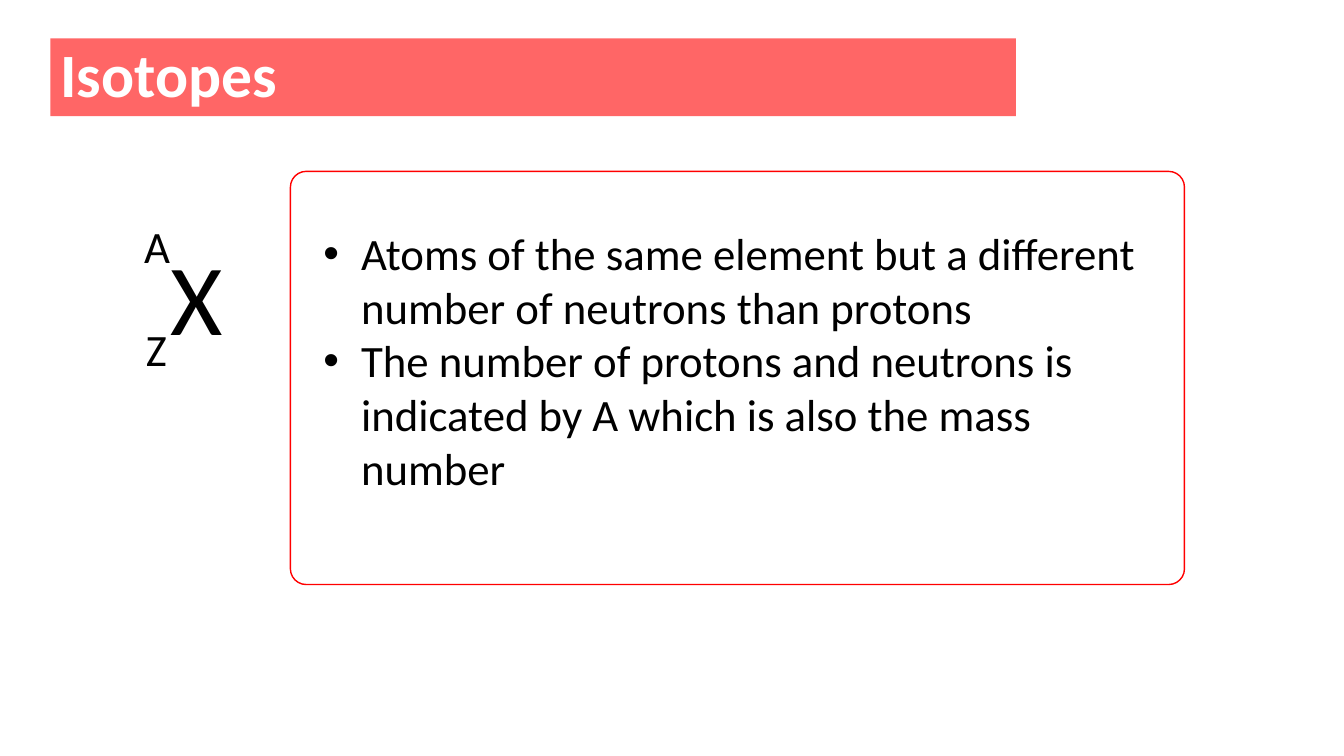
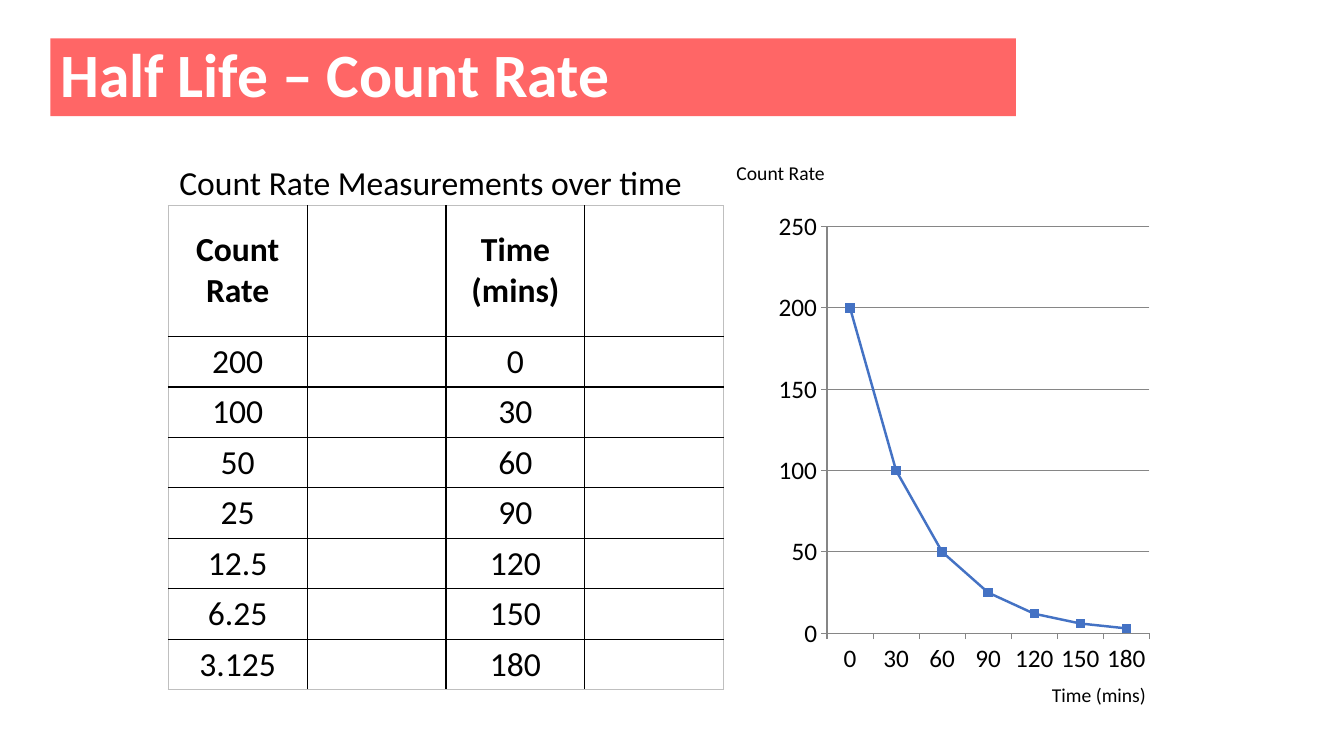
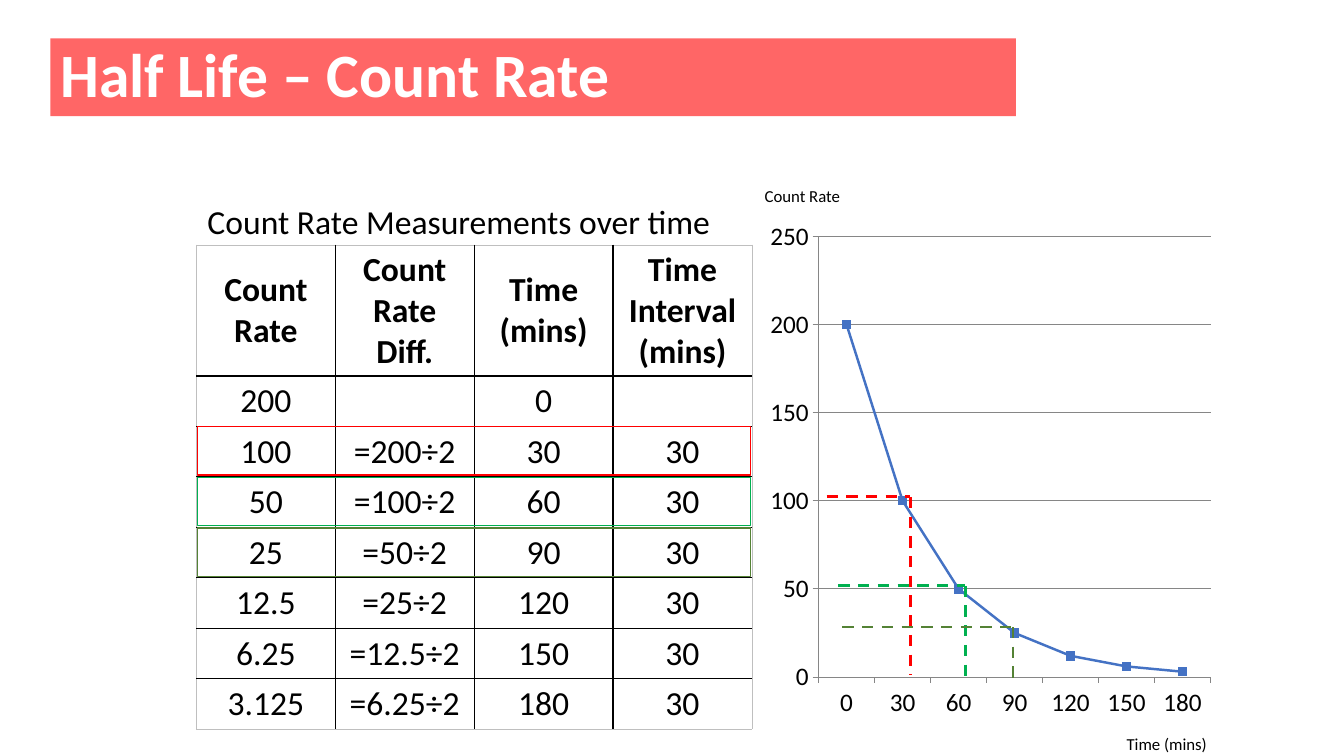
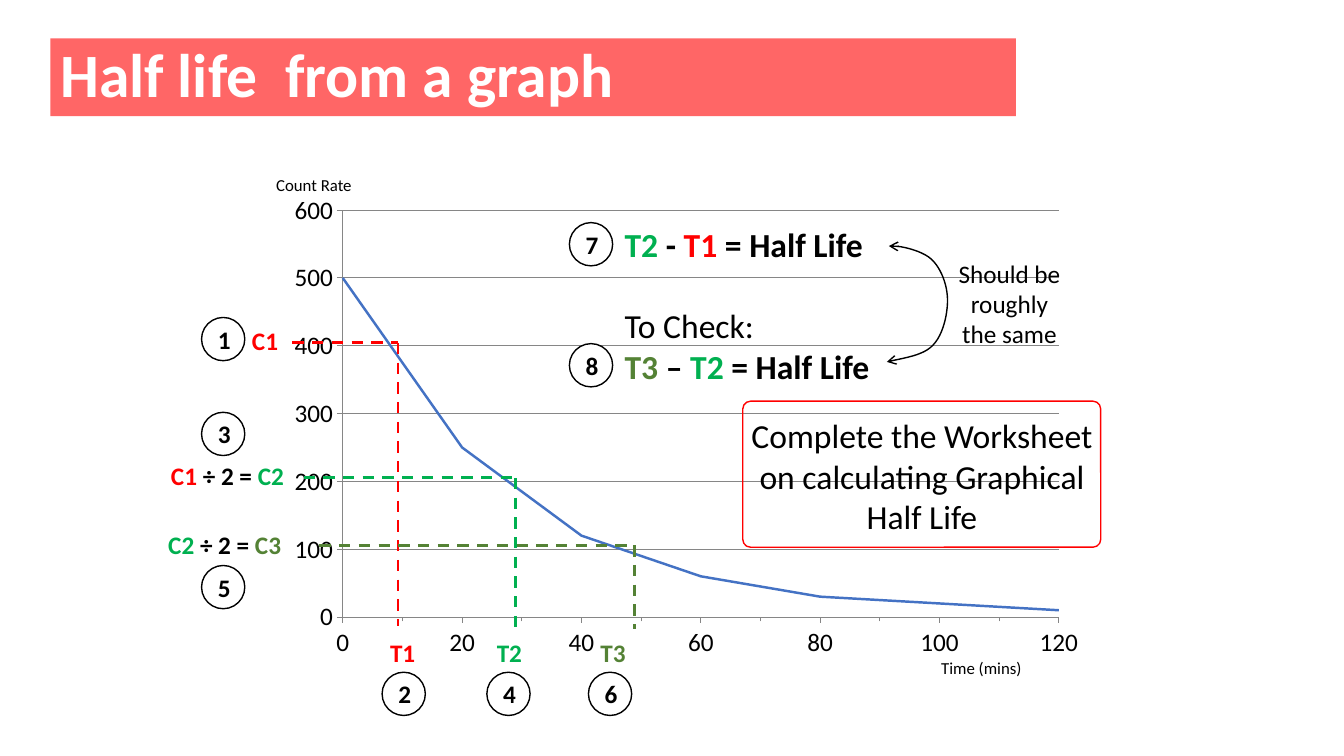
from lxml import etree
from pptx import Presentation
from pptx import util as u
from pptx.chart import data as cd
from pptx.dml.color import RGBColor
from pptx.enum import chart as ch, dml, shapes, text
from pptx.oxml.ns import qn

FONT = "Calibri"
COLORS = {"band": "FF6666", "white": "FFFFFF", "black": "000000", "red": "FF0000",
          "green": "00B050", "olive": "548235", "series": "4472C4",
          "axis": "868686", "edge": "BFBFBF"}
GUIDE_COLORS = ["red", "green", "olive"]
LEFT, CENTER = text.PP_ALIGN.LEFT, text.PP_ALIGN.CENTER
HEAD_H, ROW_H, COL_W = 3.3, 1.27, 3.5
RATES = ["200", "100", "50", "25", "12.5", "6.25", "3.125"]
TIMES = ["0", "30", "60", "90", "120", "150", "180"]
DECAY = [200, 100, 50, 25, 12, 6, 3]


def rgb(name):
    return RGBColor.from_string(COLORS[name])


def cms(*values):
    return [u.Cm(v) for v in values]


def write(tf, paras, size=18, color="black", bold=False, align=LEFT, bullet=False, spacing=None):
    """Fill a text frame; a paragraph is a string or a list of (text, colour) runs."""
    paras = [paras] if isinstance(paras, str) else paras
    for i, runs in enumerate(paras):
        p = tf.paragraphs[0] if i == 0 else tf.add_paragraph()
        p.alignment = align
        if spacing:
            p.line_spacing = spacing
        if bullet:
            pPr = p._p.get_or_add_pPr()
            pPr.set("marL", str(u.Cm(0.95)))
            pPr.set("indent", str(-u.Cm(0.95)))
            etree.SubElement(pPr, qn("a:buFont"), typeface="Arial")
            etree.SubElement(pPr, qn("a:buChar"), char="•")
        for words, tint in [(runs, color)] if isinstance(runs, str) else runs:
            r = p.add_run()
            r.text = words
            r.font.name, r.font.size = FONT, u.Pt(size)
            r.font.bold = bold or tint != color
            r.font.color.rgb = rgb(tint)


def add_text(s, box, paras, wrap=False, **fmt):
    tf = s.shapes.add_textbox(*cms(*box)).text_frame
    tf.word_wrap = wrap
    tf.auto_size = text.MSO_AUTO_SIZE.SHAPE_TO_FIT_TEXT
    write(tf, paras, **fmt)


def style(sp, fill=None, line=None):
    sp.shadow.inherit = False
    if fill:
        sp.fill.solid()
        sp.fill.fore_color.rgb = rgb(fill)
    else:
        sp.fill.background()
    if line:
        sp.line.color.rgb = rgb(line)
        sp.line.width = u.Pt(1)
    else:
        sp.line.fill.background()


def add_box(s, kind, box, fill=None, line=None, radius=None):
    sp = s.shapes.add_shape(kind, *cms(*box))
    style(sp, fill, line)
    if radius:
        sp.adjustments[0] = radius
    return sp


def titled_slide(prs, title):
    s = prs.slides.add_slide(prs.slide_layouts[6])
    sp = add_box(s, shapes.MSO_SHAPE.RECTANGLE, (1.27, 0.97, 24.33, 1.96), fill="band")
    sp.text_frame.vertical_anchor = text.MSO_ANCHOR.MIDDLE
    write(sp.text_frame, title, size=44, color="white", bold=True, spacing=0.9)
    return s


def red_card(s, box, radius):
    add_box(s, shapes.MSO_SHAPE.ROUNDED_RECTANGLE, box, line="red", radius=radius)


def nuclide(s, x, y):
    """The symbol X with its mass number A and atomic number Z."""
    add_text(s, (x + 0.66, y + 0.41, 2.31, 3.33), "X", wrap=True, size=72)
    add_text(s, (x, y, 1.17, 1.63), "A", size=32)
    add_text(s, (x + 0.05, y + 2.6, 1.04, 1.63), "Z", size=32)


def set_borders(cell, outer):
    """Draw inner borders black and those in the set outer as a thin grey edge."""
    tcPr = cell._tc.get_or_add_tcPr()
    for i, side in enumerate("LRTB"):
        color, pt = ("edge", 0.5) if side in outer else ("black", 1)
        ln = etree.Element(qn("a:ln" + side), w=str(u.Pt(pt)))
        fill = etree.SubElement(ln, qn("a:solidFill"))
        etree.SubElement(fill, qn("a:srgbClr"), val=COLORS[color])
        tcPr.insert(i, ln)


def rate_table(s, x, y, rows):
    add_text(s, (x + 0.03, y - 1.22, 13.31, 1.27), "Count Rate Measurements over time", size=24)
    n, m = len(rows), len(rows[0])
    height = HEAD_H + (n - 1) * ROW_H
    tbl = s.shapes.add_table(n, m, *cms(x, y, m * COL_W, height)).table
    tbl.first_row = tbl.horz_banding = False
    for col in tbl.columns:
        col.width = u.Cm(COL_W)
    for i, row in enumerate(rows):
        tbl.rows[i].height = u.Cm(ROW_H if i else HEAD_H)
        for j, words in enumerate(row):
            cell = tbl.cell(i, j)
            cell.fill.background()
            cell.vertical_anchor = text.MSO_ANCHOR.MIDDLE
            if words:
                write(cell.text_frame, words, size=24, bold=i == 0, align=CENTER)
            edges = {"L": j == 0, "R": j == m - 1, "T": i == 0, "B": i == n - 1}
            set_borders(cell, {side for side, on in edges.items() if on})


def rate_chart(s, box, cats, vals, top, step, rate_at, time_at, label_size=12, markers=True):
    """Line chart with axis captions placed at offsets from its top left corner."""
    data = cd.CategoryChartData()
    data.categories = cats
    data.add_series("Series 1", vals)
    kind = ch.XL_CHART_TYPE.LINE_MARKERS if markers else ch.XL_CHART_TYPE.LINE
    chart = s.shapes.add_chart(kind, *cms(*box), data).chart
    chart.has_legend = chart.has_title = False
    chart.font.name, chart.font.size = FONT, u.Pt(18)
    chart.font.color.rgb = rgb("black")
    plot = chart.plots[0]
    plot.vary_by_categories = False
    series = plot.series[0]
    series.smooth = False
    series.format.line.color.rgb = rgb("series")
    series.format.line.width = u.Pt(1.75)
    if markers:
        series.marker.style = ch.XL_MARKER_STYLE.SQUARE
        series.marker.size = 6
        series.marker.format.fill.solid()
        series.marker.format.fill.fore_color.rgb = rgb("series")
        series.marker.format.line.color.rgb = rgb("series")
    val, cat = chart.value_axis, chart.category_axis
    val.minimum_scale, val.maximum_scale, val.major_unit = 0, top, step
    val.has_major_gridlines = True
    for axis in (val, cat):
        axis.major_tick_mark = ch.XL_TICK_MARK.OUTSIDE
    for part in (val, cat, val.major_gridlines):
        part.format.line.color.rgb = rgb("axis")
        part.format.line.width = u.Pt(0.75)
    if not markers:
        cat.minor_tick_mark = ch.XL_TICK_MARK.OUTSIDE
        start_on_axis(val)
    x, y = box[:2]
    w, h = (2.9, 0.86) if label_size > 12 else (2.57, 0.76)
    for words, (dx, dy) in (("Time (mins)", time_at), ("Count Rate", rate_at)):
        add_text(s, (x + dx, y + dy, w, h), words, size=label_size)


def start_on_axis(val):
    """Let the first category lie on the value axis."""
    xml = val._element
    for old in xml.findall(qn("c:crossBetween")):
        xml.remove(old)
    cross = etree.Element(qn("c:crossBetween"), val="midCat")
    xml.find(qn("c:crosses")).addnext(cross)


def guide(parent, color, x0, y0, x1, y1):
    """Dashed reading line: across from the value axis, then down to the time axis."""
    for ends in ((x0, y0, x1, y0), (x1, y0, x1, y1)):
        c = parent.shapes.add_connector(shapes.MSO_CONNECTOR.STRAIGHT, *cms(*ends))
        c.line.color.rgb = rgb(color)
        c.line.width = u.Pt(2)
        c.line.dash_style = dml.MSO_LINE.DASH
        etree.SubElement(c.element.spPr, qn("a:effectLst"))


def step_circle(s, number, x, y):
    sp = add_box(s, shapes.MSO_SHAPE.OVAL, (x, y, 1.09, 1.09), fill="white", line="black")
    sp.text_frame.vertical_anchor = text.MSO_ANCHOR.MIDDLE
    write(sp.text_frame, str(number), bold=True, align=CENTER)


def bezier(p0, p1, p2, p3, steps=12):
    for i in range(1, steps + 1):
        t = i / steps
        yield tuple((1 - t) ** 3 * a + 3 * t * (1 - t) ** 2 * b + 3 * t * t * (1 - t) * c + t ** 3 * d
                    for a, b, c, d in zip(p0, p1, p2, p3))


def compare_arrow(s, x, y):
    """Curved double arrow in a box with its top left corner at x, y."""
    knots = [(0, 2.92), (0.41, 2.82), (0.92, 2.77), (1.17, 2.49), (1.42, 2.23),
             (1.53, 1.72), (1.53, 1.37), (1.53, 0.99), (1.37, 0.56), (1.12, 0.33),
             (0.87, 0.1), (0.26, -0.03), (0.05, 0)]
    knots = [(x + dx, y + dy) for dx, dy in knots]
    curve = [pt for i in range(0, len(knots) - 1, 3) for pt in bezier(*knots[i:i + 4])]
    fb = s.shapes.build_freeform(*cms(*knots[0]))
    fb.add_line_segments([cms(*pt) for pt in curve], close=False)
    sp = fb.convert_to_shape()
    style(sp, line="black")
    ln = sp.element.spPr.find(qn("a:ln"))
    for end in ("a:headEnd", "a:tailEnd"):
        etree.SubElement(ln, qn(end), type="arrow")


def isotopes(prs):
    s = titled_slide(prs, "Isotopes")
    red_card(s, (7.32, 4.32, 22.53, 10.41), 0.038)
    add_text(s, (7.9, 5.56, 21.41, 7.09), [
        "Atoms of the same element but a different number of neutrons than protons",
        "The number of protons and neutrons is indicated by A which is also the mass number",
    ], wrap=True, size=32, bullet=True)
    nuclide(s, 3.38, 5.38)


def count_rate(prs):
    s = titled_slide(prs, "Half Life – Count Rate")
    rows = [["Count Rate", "", "Time (mins)", ""]]
    rows += [[rate, "", time, ""] for rate, time in zip(RATES, TIMES)]
    rate_table(s, 4.24, 5.18, rows)
    rate_chart(s, (19.43, 5.08, 9.73, 12.14), TIMES, DECAY, 250, 50,
               rate_at=(-1.12, -1.14), time_at=(6.83, 12.01), label_size=14)


def count_rate_halving(prs):
    s = titled_slide(prs, "Half Life – Count Rate")
    x, y = 4.95, 6.17
    rows = [["Count Rate", "Count Rate Diff.", "Time (mins)", "Time Interval (mins)"],
            [RATES[0], "", TIMES[0], ""]]
    rows += [[rate, f"={before}÷2", time, "30"]
             for before, rate, time in zip(RATES, RATES[1:], TIMES[1:])]
    rate_table(s, x, y, rows)
    rate_chart(s, (19.18, 5.31, 11.56, 13.03), TIMES, DECAY, 250, 50,
               rate_at=(-0.16, -0.76), time_at=(8.96, 13.05))
    guides = [(20.83, 12.52, 22.94, 17.02), (21.13, 14.76, 24.33, 17.22),
              (21.23, 15.8, 25.53, 17.27)]
    for color, ends in zip(GUIDE_COLORS, guides):
        guide(s.shapes.add_group_shape(), color, *ends)
    for i, color in enumerate(GUIDE_COLORS):
        top = y + HEAD_H + (i + 1) * 1.28
        add_box(s, shapes.MSO_SHAPE.RECTANGLE, (x + 0.03, top, 13.94, 1.22), line=color)


def half_life_graph(prs):
    s = titled_slide(prs, "Half life  from a graph")
    rate_chart(s, (7.01, 4.67, 20.57, 12.14), ["0", "20", "40", "60", "80", "100", "120"],
               [500, 250, 120, 60, 30, 20, 10], 600, 100,
               rate_at=(-0.3, -0.38), time_at=(16.46, 11.79), markers=False)
    guides = [(7.37, 8.64, 10.03, 15.77), (7.65, 12.04, 13, 15.85), (8.05, 13.74, 16, 15.85)]
    for i, (color, ends, x) in enumerate(zip(GUIDE_COLORS, guides, (9.58, 12.27, 14.88)), 1):
        guide(s, color, *ends)
        add_text(s, (x, 15.93, 1.14, 1.02), f"T{i}", color=color, bold=True)

    half_life = (" = Half Life", "black")
    add_text(s, (15.49, 5.51, 7.95, 1.27),
             [[("T2 ", "green"), ("- ", "black"), ("T1", "red"), half_life]],
             wrap=True, size=24, bold=True)
    add_text(s, (15.49, 7.57, 7.95, 1.27), "To Check:", wrap=True, size=24)
    add_text(s, (15.49, 8.6, 7.95, 1.27),
             [[("T3 ", "olive"), ("– ", "black"), ("T2", "green"), half_life]],
             wrap=True, size=24, bold=True)

    halve = ("÷ 2 = ", "black")
    add_text(s, (6.1, 8.08, 1.17, 1.02), "C1", color="red", bold=True)
    add_text(s, (4.06, 11.48, 3.43, 1.02), [[("C1 ", "red"), halve, ("C2", "green")]], bold=True)
    add_text(s, (3.99, 13.21, 3.43, 1.02), [[("C2 ", "green"), halve, ("C3", "olive")]], bold=True)

    spots = [(5.08, 8), (9.63, 16.94), (5.08, 10.39), (12.27, 16.94),
             (5.08, 14.25), (14.83, 16.94), (14.35, 5.61), (14.35, 8.66)]
    for number, (x, y) in enumerate(spots, 1):
        step_circle(s, number, x, y)

    compare_arrow(s, 22.35, 6.2)
    add_text(s, (23.88, 6.38, 3.12, 2.57), ["Should be", "roughly", "the same"], align=CENTER)
    add_text(s, (18.64, 10.34, 9.19, 3.33),
             "Complete the Worksheet on calculating Graphical Half Life",
             wrap=True, size=24, align=CENTER)
    red_card(s, (18.72, 10.11, 9.02, 3.68), 0.053)


def main():
    prs = Presentation()
    prs.slide_width, prs.slide_height = cms(33.87, 19.05)
    for build in (isotopes, count_rate, count_rate_halving, half_life_graph):
        build(prs)
    prs.save("out.pptx")


if __name__ == "__main__":
    main()
